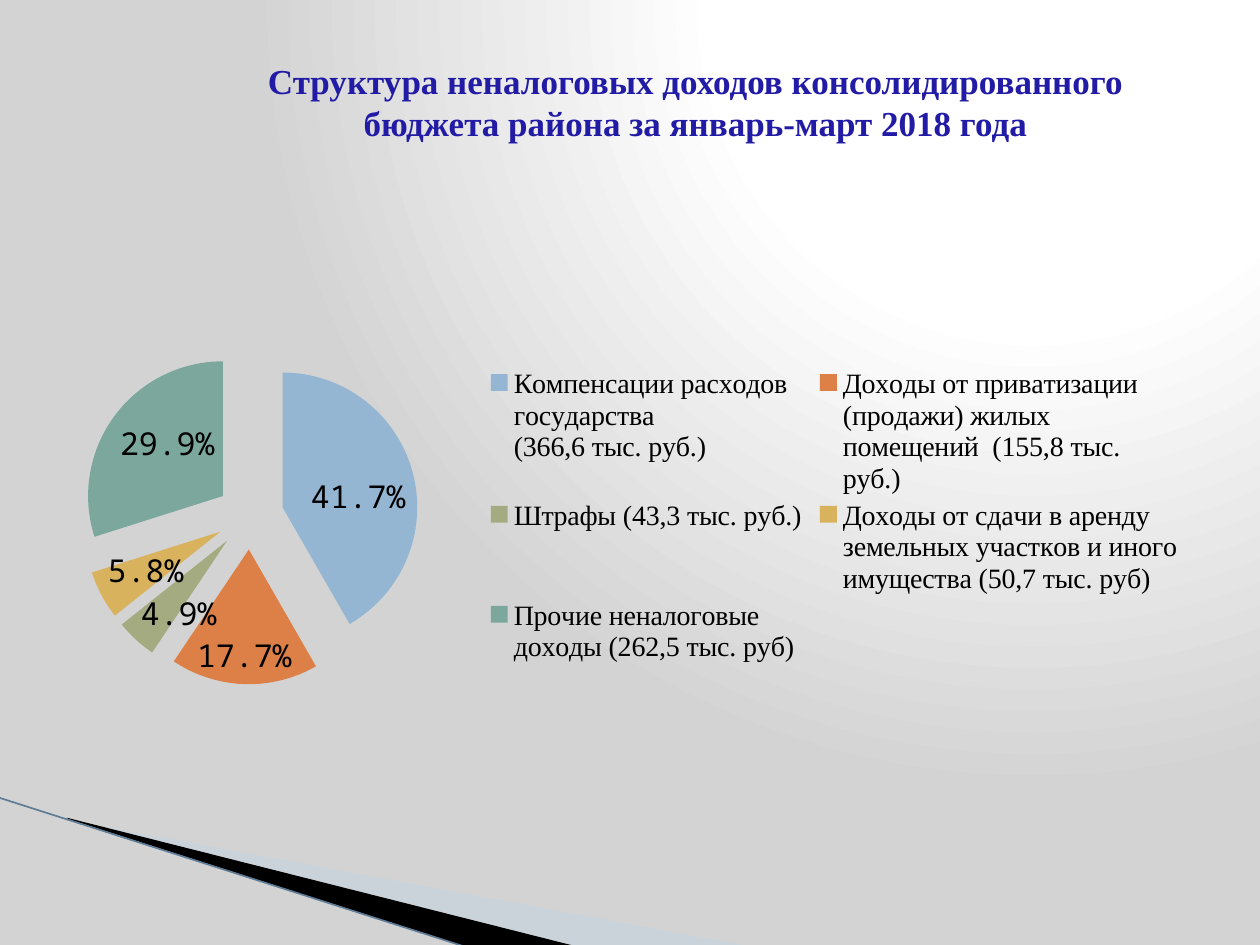
import pptx
import pptx.chart.data
import pptx.dml.color
import pptx.enum.chart
import pptx.enum.shapes
import pptx.enum.text
import pptx.oxml
import pptx.oxml.ns
import pptx.util
from pptx.util import Inches

COLORS = {
    "white": "FFFFFF", "backdrop": "D3D3D3", "title": "221BA5", "text": "000000",
    "pale_wedge": "C0D3E6", "dark_wedge": "000000", "edge": "5E7C96",
}
SERIF = "Times New Roman"
MONO = "Noto Sans Mono"

# Category, share, slice colour
INCOME = [
    ("Компенсации расходов государства\n(366,6 тыс. руб.)", 0.417, "94B6D2"),
    ("Доходы от приватизации (продажи) жилых помещений  (155,8 тыс. руб.)", 0.177, "DD8047"),
    ("Штрафы (43,3 тыс. руб.)", 0.049, "A5AB81"),
    ("Доходы от сдачи в аренду земельных участков и иного имущества (50,7 тыс. руб)",
     0.058, "D8B25C"),
    ("Прочие неналоговые доходы (262,5 тыс. руб)", 0.299, "7BA79D"),
]


def rgb(value):
    return pptx.dml.color.RGBColor.from_string(value)


def xml(tag, body="", attrs=""):
    prefix = tag.split(":")[0]
    return pptx.oxml.parse_xml(
        f"<{tag} {pptx.oxml.ns.nsdecls(prefix)} {attrs}>{body}</{tag}>")


def set_font(font, size, face, color, bold=False):
    font.size = pptx.util.Pt(size)
    font.name = face
    font.bold = bold
    font.color.rgb = rgb(color)


def add_background(slide):
    fill = slide.background.fill
    fill.gradient()
    stops = "".join(
        f'<a:gs pos="{position * 1000}"><a:srgbClr val="{COLORS[name]}"/></a:gs>'
        for position, name in ((0, "white"), (40, "white"), (100, "backdrop")))
    body = (f'<a:gsLst>{stops}</a:gsLst><a:path path="circle">'
            '<a:fillToRect l="65000" t="0" r="0" b="98000"/></a:path>')
    gradient = slide.background._cSld.find(".//" + pptx.oxml.ns.qn("a:gradFill"))
    gradient.getparent().replace(gradient, xml("a:gradFill", body, 'rotWithShape="1"'))


def add_wedge(slide, points, color, opacity=100):
    start, *rest = [(Inches(x), Inches(y)) for x, y in points]
    builder = slide.shapes.build_freeform(*start)
    builder.add_line_segments(rest, close=True)
    wedge = builder.convert_to_shape()
    wedge.shadow.inherit = False
    wedge.fill.solid()
    wedge.fill.fore_color.rgb = rgb(color)
    wedge.line.fill.background()
    if opacity < 100:
        swatch = wedge._element.spPr.find(".//" + pptx.oxml.ns.qn("a:srgbClr"))
        swatch.append(xml("a:alpha", attrs=f'val="{opacity * 1000}"'))


def add_edge(slide, start, end, color, width):
    edge = slide.shapes.add_connector(
        pptx.enum.shapes.MSO_CONNECTOR.STRAIGHT, *map(Inches, start + end))
    edge.line.color.rgb = rgb(color)
    edge.line.width = pptx.util.Pt(width)
    edge._element.spPr.append(xml("a:effectLst"))


def add_text(slide, text, *, box, size, face, color, bold=False):
    frame = slide.shapes.add_textbox(*map(Inches, box)).text_frame
    frame.word_wrap = True
    frame.vertical_anchor = pptx.enum.text.MSO_ANCHOR.MIDDLE
    paragraph = frame.paragraphs[0]
    paragraph.alignment = pptx.enum.text.PP_ALIGN.CENTER
    run = paragraph.add_run()
    run.text = text
    set_font(run.font, size, face, color, bold)


def place_plot(plot_area, x, y, w, h):
    for old in plot_area.findall(pptx.oxml.ns.qn("c:layout")):
        plot_area.remove(old)
    body = ('<c:manualLayout><c:layoutTarget val="inner"/>'
            '<c:xMode val="edge"/><c:yMode val="edge"/>'
            f'<c:x val="{x}"/><c:y val="{y}"/><c:w val="{w}"/><c:h val="{h}"/>'
            '</c:manualLayout>')
    plot_area.insert(0, xml("c:layout", body))


def add_income_pie(slide, box):
    data = pptx.chart.data.CategoryChartData(number_format="0.0%")
    data.categories = [name for name, _, _ in INCOME]
    data.add_series("Series 1", [share for _, share, _ in INCOME])
    chart = slide.shapes.add_chart(
        pptx.enum.chart.XL_CHART_TYPE.PIE, *map(Inches, box), data).chart
    chart.has_title = False
    set_font(chart.font, 18, MONO, COLORS["text"])

    # Slices, pulled apart
    plot = chart.plots[0]
    plot.vary_by_categories = True
    series = plot.series[0]
    series._element.find(pptx.oxml.ns.qn("c:tx")).addnext(
        xml("c:explosion", attrs='val="25"'))
    for index, (_, _, color) in enumerate(INCOME):
        part = series.points[index].format
        part.fill.solid()
        part.fill.fore_color.rgb = rgb(color)
        part.line.fill.background()

    # Share labels
    labels = series.data_labels
    labels.show_value = True
    labels.show_percentage = False
    labels.number_format = "0.0%"
    labels.number_format_is_linked = False
    labels.position = pptx.enum.chart.XL_LABEL_POSITION.INSIDE_END
    set_font(labels.font, 18, MONO, COLORS["text"])

    # Legend to the right of the pie
    chart.has_legend = True
    legend = chart.legend
    legend.position = pptx.enum.chart.XL_LEGEND_POSITION.RIGHT
    legend.include_in_layout = False
    set_font(legend.font, 16, SERIF, COLORS["text"])
    place_plot(chart._chartSpace.chart.plotArea, 0.01, 0.23, 0.31, 0.54)


def main():
    deck = pptx.Presentation()
    deck.slide_width, deck.slide_height = Inches(10), Inches(7.5)
    slide = deck.slides.add_slide(deck.slide_layouts[6])

    # Backdrop and corner decoration
    add_background(slide)
    add_wedge(slide, [(0.55, 6.51), (5.95, 7.51), (4.56, 7.51), (0.55, 6.5)],
              COLORS["pale_wedge"], opacity=40)
    add_wedge(slide, [(0.53, 6.49), (4.57, 7.51), (3.72, 7.52), (0.54, 6.5)],
              COLORS["dark_wedge"])
    add_edge(slide, (-0.01, 6.33), (3.71, 7.52), COLORS["edge"], 0.95)

    # Content
    add_income_pie(slide, (0.5, 1.62, 9, 4.95))
    add_text(slide,
             "Структура неналоговых доходов консолидированного бюджета района "
             "за январь-март 2018 года",
             box=(1.54, 0.3, 7.96, 1.01), size=20, face=SERIF,
             color=COLORS["title"], bold=True)

    deck.save("out.pptx")


if __name__ == "__main__":
    main()
